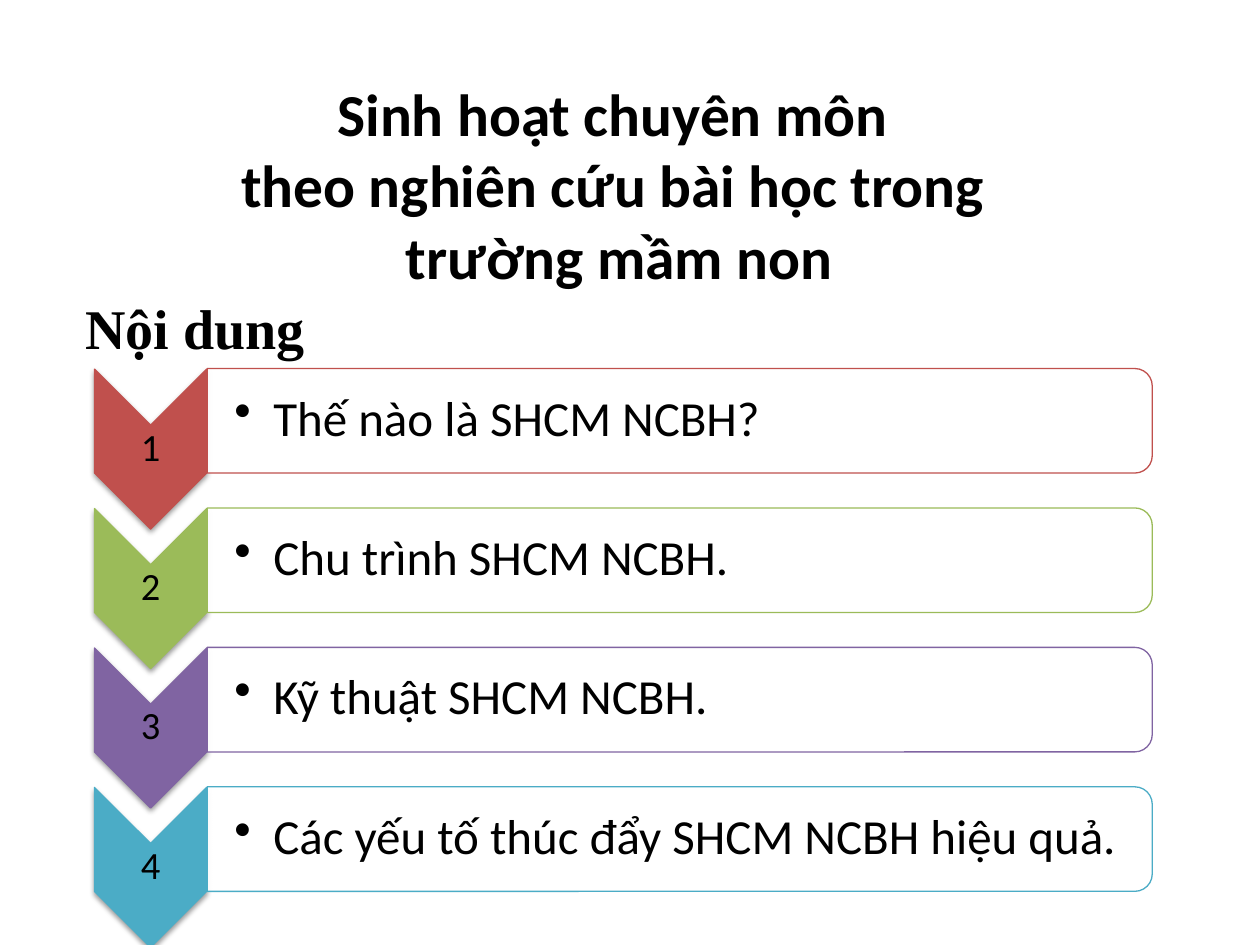
"""Build the agenda slide: a title, a heading and four numbered chevron rows."""
import lxml.etree
import pptx
import pptx.dml.color
import pptx.enum.shapes
import pptx.enum.text
import pptx.oxml.ns
import pptx.util

Inches = pptx.util.Inches
Pt = pptx.util.Pt
RGBColor = pptx.dml.color.RGBColor
SHAPES = pptx.enum.shapes.MSO_SHAPE
ALIGN = pptx.enum.text.PP_ALIGN
qn = pptx.oxml.ns.qn

BLACK = RGBColor(0x00, 0x00, 0x00)
WHITE = RGBColor(0xFF, 0xFF, 0xFF)
RED = RGBColor(0xC0, 0x50, 0x4D)
GREEN = RGBColor(0x9B, 0xBB, 0x59)
PURPLE = RGBColor(0x80, 0x64, 0xA2)
TEAL = RGBColor(0x4B, 0xAC, 0xC6)


def add_text(page, place, text, font, insets=(0.1, 0.05, 0.1, 0.05), bullet=None, **layout):
    box = page.shapes.add_textbox(*map(Inches, place))
    frame = box.text_frame
    frame.word_wrap = True
    frame.vertical_anchor = pptx.enum.text.MSO_ANCHOR.MIDDLE
    for side, inset in zip(("left", "top", "right", "bottom"), insets):
        setattr(frame, f"margin_{side}", Inches(inset))
    para = frame.paragraphs[0]
    para.text = text
    if bullet:
        props = para._p.get_or_add_pPr()
        props.set("marL", str(Inches(0.31)))
        props.set("indent", str(Inches(-0.31)))
        lxml.etree.SubElement(props, qn("a:buChar"), char=bullet)
    for name, value in layout.items():
        setattr(para, name, value)
    for span in para.runs:
        for name, value in font.items():
            setattr(span.font, name, value)
        span.font.color.rgb = BLACK


def add_turned_shape(page, kind, place, fill, line):
    shape = page.shapes.add_shape(kind, *map(Inches, place))
    shape.rotation = 90
    shape.shadow.inherit = False
    shape.fill.solid()
    shape.fill.fore_color.rgb = fill
    shape.line.color.rgb = line
    shape.line.width = Pt(0.75)
    return shape


deck = pptx.Presentation()
deck.slide_width = Inches(10)
deck.slide_height = Inches(7.5)
page = deck.slides.add_slide(deck.slide_layouts[6])

add_text(page, (0.58, 0.42, 8.67, 2.08),
         "Sinh hoạt chuyên môn \vtheo nghiên cứu bài học trong \vtrường mầm non",
         {"name": "Calibri", "size": Pt(34), "bold": True}, alignment=ALIGN.CENTER)
add_text(page, (0.58, 2.17, 9, 0.86), "Nội dung",
         {"name": "Times New Roman", "size": Pt(32), "bold": True})

topics = [
    ("Thế nào là SHCM NCBH?", RED),
    ("Chu trình SHCM NCBH.", GREEN),
    ("Kỹ thuật SHCM NCBH.", PURPLE),
    ("Các yếu tố thúc đẩy SHCM NCBH hiệu quả.", TEAL),
]
row_pitch = 3.32 / 3

for index, (topic, color) in enumerate(topics):
    offset = index * row_pitch

    chevron = add_turned_shape(page, SHAPES.CHEVRON, (0.56, 3.12 + offset, 1.27, 0.89), color, color)
    effects = chevron._element.spPr.find(qn("a:effectLst"))
    shadow = lxml.etree.SubElement(effects, qn("a:outerShdw"), blurRad=str(Pt(3.1)),
                                   dist=str(Pt(1.6)), dir="5400000", rotWithShape="0")
    shade = lxml.etree.SubElement(shadow, qn("a:srgbClr"), val=str(BLACK))
    lxml.etree.SubElement(shade, qn("a:alpha"), val="38000")
    add_text(page, (0.75, 3.37 + offset, 0.89, 0.38), str(index + 1),
             {"name": "Calibri", "size": Pt(22)}, insets=(0.02,) * 4,
             alignment=ALIGN.CENTER, line_spacing=0.9)

    bar = add_turned_shape(page, SHAPES.ROUND_2_SAME_RECTANGLE,
                           (4.98, -0.41 + offset, 0.83, 7.5), WHITE, color)
    bar_fill = bar._element.spPr.find(qn("a:solidFill"))
    lxml.etree.SubElement(bar_fill[0], qn("a:alpha"), val="90000")
    add_text(page, (1.64, 2.96 + offset, 7.46, 0.75), topic,
             {"name": "Calibri", "size": Pt(28)}, insets=(0.22, 0.02, 0.02, 0.02),
             bullet="•", level=1, line_spacing=0.9)

deck.save("out.pptx")
